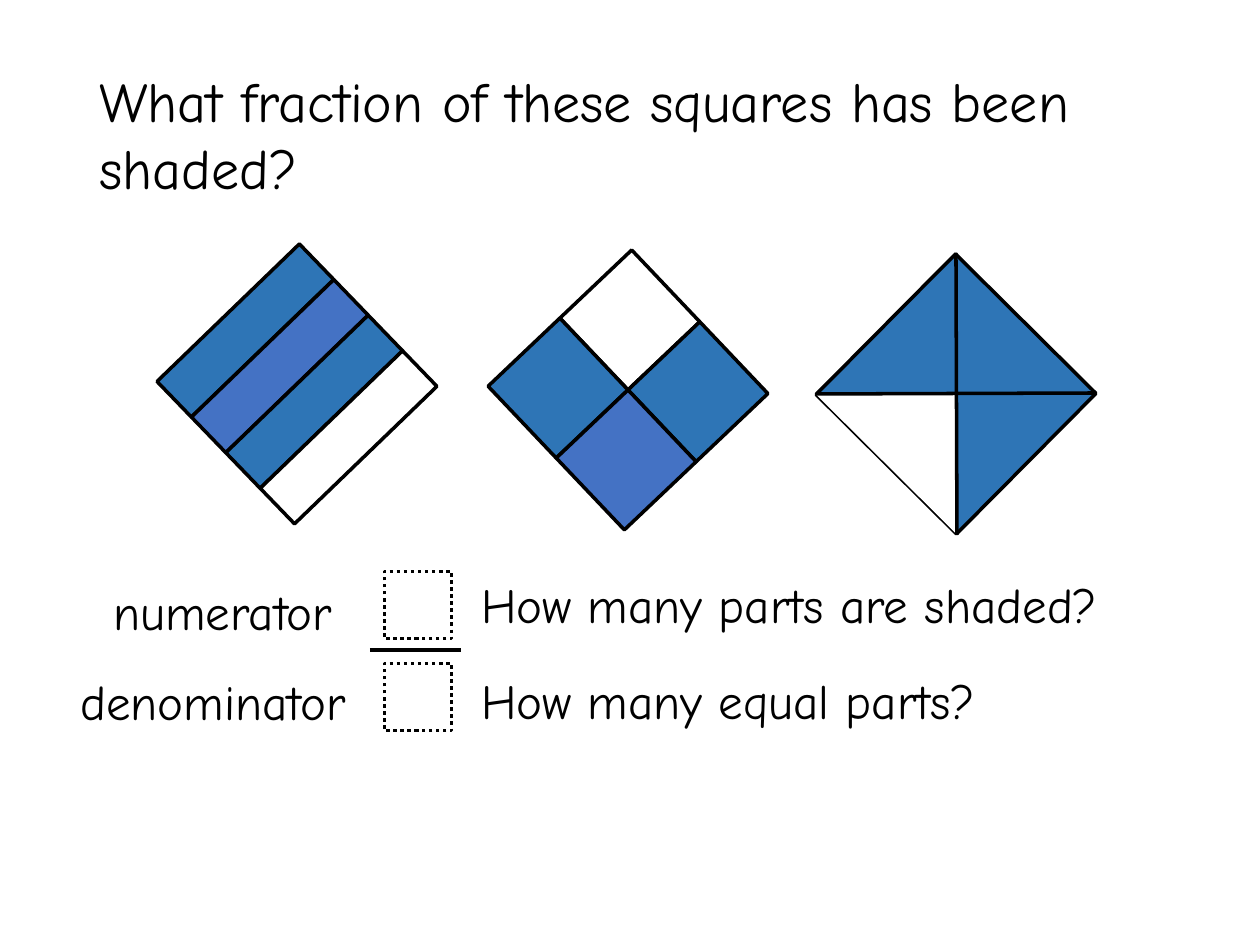
from dataclasses import dataclass
from math import cos, radians, sin

from lxml import etree
from pptx import Presentation
from pptx.dml.color import RGBColor
from pptx.enum.dml import MSO_LINE
from pptx.enum.shapes import MSO_CONNECTOR, MSO_SHAPE
from pptx.oxml.ns import qn
from pptx.util import Emu, Pt

RECTANGLE = MSO_SHAPE.RECTANGLE
TRIANGLE = MSO_SHAPE.ISOSCELES_TRIANGLE
STRAIGHT = MSO_CONNECTOR.STRAIGHT
DOTTED = MSO_LINE.ROUND_DOT
SCALE = 914400 / 126
SIDE = 198


@dataclass(frozen=True)
class Theme:
    """Colours, font and type sizes of the slide."""
    ink: str = "000000"
    paper: str = "FFFFFF"
    shade: str = "2E75B6"
    accent: str = "4472C4"
    font: str = "Comic Neue"
    title: int = 32
    label: int = 28
    stroke: int = 2


THEME = Theme()


def px(length):
    """Turn pixels into EMU."""
    return Emu(round(length * SCALE))


def rgb(value):
    """Turn a hex string into a colour."""
    return RGBColor.from_string(value)


def add_text(slide, text, left, top, width, height, size):
    """Add a wrapped, left-aligned line of text."""
    box = slide.shapes.add_textbox(px(left), px(top), px(width), px(height))
    box.text_frame.word_wrap = True
    paragraph = box.text_frame.paragraphs[0]
    paragraph.text = text
    font = paragraph.runs[0].font
    for name, value in {"name": THEME.font, "size": Pt(size)}.items():
        setattr(font, name, value)
    font.color.rgb = rgb(THEME.ink)


def add_part(slide, center, size, fill, angle=0, kind=RECTANGLE, outlined=True):
    """Add a filled shape around a center and return it."""
    (x, y), (width, height) = center, size
    shape = slide.shapes.add_shape(
        kind, px(x - width / 2), px(y - height / 2), px(width), px(height))
    shape.rotation = angle
    shape.shadow.inherit = False
    shape.fill.solid()
    shape.fill.fore_color.rgb = rgb(fill)
    if outlined:
        shape.line.color.rgb = rgb(THEME.ink)
        shape.line.width = Pt(THEME.stroke)
    else:
        shape.line.fill.background()
    return shape


def add_line(slide, start, end):
    """Add a straight black line."""
    line = slide.shapes.add_connector(STRAIGHT, *map(px, start + end))
    line.line.color.rgb = rgb(THEME.ink)
    line.line.width = Pt(THEME.stroke)
    etree.SubElement(line._element.spPr, qn("a:effectLst"))


def turned(center, across, down, angle):
    """Find the slide point of an offset inside a rotated square."""
    turn = radians(angle)
    return (center[0] + across * cos(turn) - down * sin(turn),
            center[1] + across * sin(turn) + down * cos(turn))


def add_striped_square(slide, center, angle):
    """Add a square cut into four strips."""
    fills = [THEME.shade, THEME.accent, THEME.shade, THEME.paper]
    strip = SIDE / len(fills)
    for index, fill in enumerate(fills):
        across = (index + 0.5) * strip - SIDE / 2
        add_part(slide, turned(center, across, 0, angle), (strip, SIDE), fill, angle)


def add_quartered_square(slide, center, angle):
    """Add a square cut into four smaller squares."""
    offset = SIDE / 4
    quarters = [(-1, -1, THEME.paper), (1, -1, THEME.shade),
                (-1, 1, THEME.shade), (1, 1, THEME.accent)]
    for across, down, fill in quarters:
        point = turned(center, across * offset, down * offset, angle)
        add_part(slide, point, (SIDE / 2, SIDE / 2), fill, angle)


def add_triangle_square(slide, center, angle):
    """Add a square cut into four triangles by its diagonals."""
    add_part(slide, center, (SIDE, SIDE), THEME.shade, angle)
    add_part(slide, turned(center, 0, SIDE / 4, angle), (SIDE, SIDE / 2),
             THEME.paper, angle, TRIANGLE, outlined=False)
    x, y = center
    add_line(slide, (x, y - 141), (x + 1, y + 141))
    add_line(slide, (x + 140, y - 1), (x - 140, y))


def add_fraction(slide):
    """Add the empty fraction with its labels and questions."""
    add_line(slide, (370, 650), (461, 650))
    for middle in (605, 697):
        box = add_part(slide, (418, middle), (67, 67), THEME.paper)
        box.line.dash_style = DOTTED
    labels = [("How many parts are shaded?", 469, 568, 687),
              ("How many equal parts?", 469, 664, 549),
              ("numerator", 101, 575, 265),
              ("denominator", 68, 665, 311)]
    for text, left, top, width in labels:
        add_text(slide, text, left, top, width, 72, THEME.label)


def main():
    """Build and save the slide."""
    presentation = Presentation()
    presentation.slide_width, presentation.slide_height = px(1260), px(945)
    slide = presentation.slides.add_slide(presentation.slide_layouts[6])
    add_text(slide, "What fraction of these squares has been shaded?",
             87, 60, 1034, 148, THEME.title)
    add_striped_square(slide, (297, 384), 46)
    add_quartered_square(slide, (628, 390), 46.5)
    add_triangle_square(slide, (956, 394), 44.8)
    add_fraction(slide)
    presentation.save("out.pptx")


if __name__ == "__main__":
    main()
